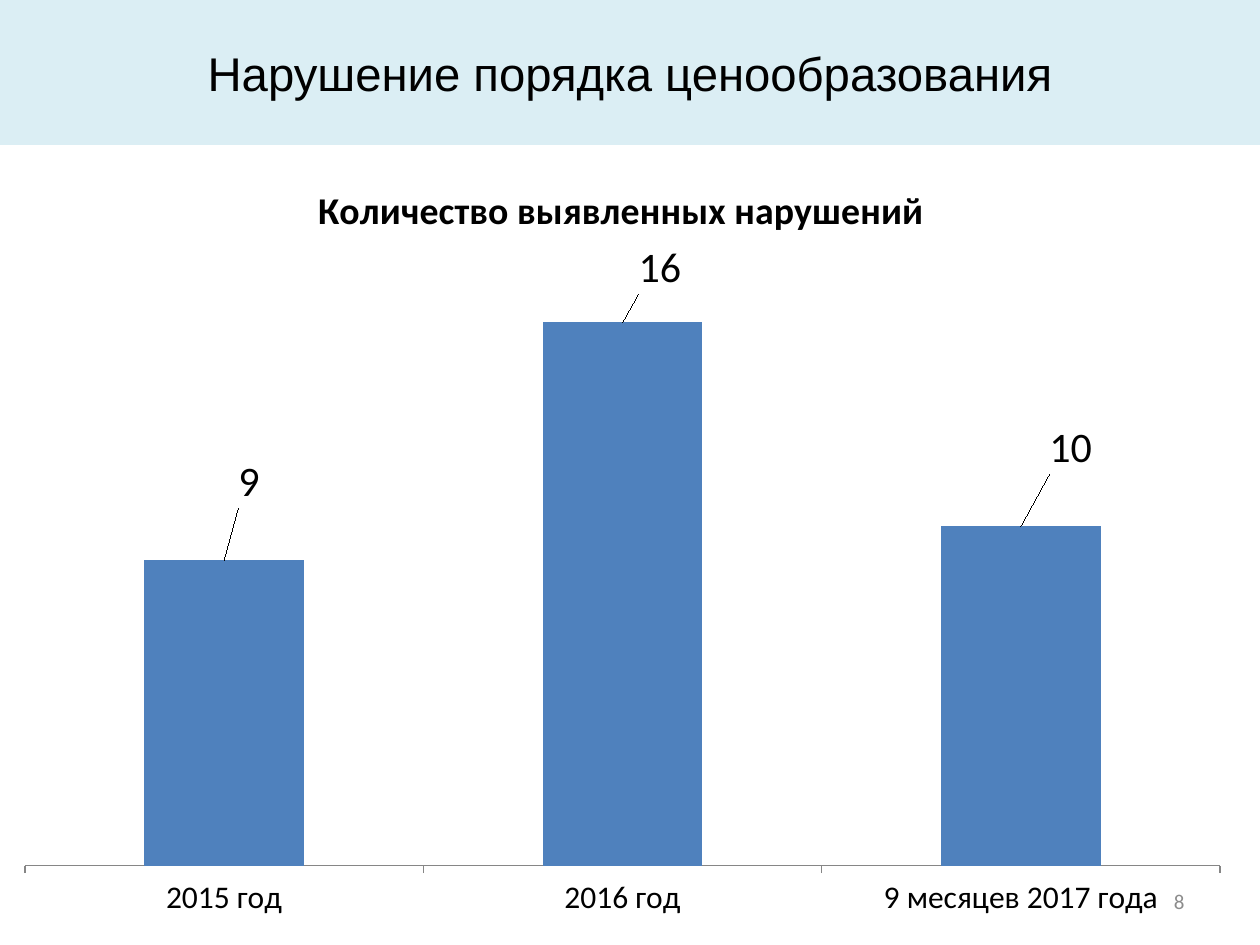
from lxml import etree
from pptx import Presentation
from pptx import util as u
from pptx.chart.data import CategoryChartData
from pptx.dml.color import RGBColor
from pptx.enum import chart as charts, shapes, text
from pptx.oxml.ns import qn

COLORS = {
    "band": "DBEEF4",
    "bar": "4F81BD",
    "axis": "868686",
    "text": "000000",
    "page_number": "8C8C8C",
}
CHART_TITLE = "Количество выявленных нарушений"
# Category, value, label shift as fractions of the chart size
VIOLATIONS = [
    ("2015 год", 9, (0.02, -0.06)),
    ("2016 год", 16, (0.03, -0.03)),
    ("9 месяцев 2017 года", 10, (0.04, -0.06)),
]


def color(name):
    return RGBColor.from_string(COLORS[name])


def set_font(font, name, size, color_name="text", bold=False):
    font.name = name
    font.size = u.Pt(size)
    font.bold = bold
    font.color.rgb = color(color_name)


def write_line(shape, words, alignment, **font):
    frame = shape.text_frame
    frame.word_wrap = True
    frame.vertical_anchor = text.MSO_ANCHOR.MIDDLE
    paragraph = frame.paragraphs[0]
    paragraph.text = words
    paragraph.alignment = alignment
    set_font(paragraph.font, **font)


def manual_layout(**settings):
    """Return a c:layout element that holds the given settings in order."""
    layout = etree.Element(qn("c:layout"))
    manual = etree.SubElement(layout, qn("c:manualLayout"))
    for name, value in settings.items():
        etree.SubElement(manual, qn(f"c:{name}"), val=str(value))
    return layout


def add_title_band(slide, width):
    band = slide.shapes.add_shape(
        shapes.MSO_SHAPE.RECTANGLE, 0, 0, width, u.Cm(2.92))
    band.shadow.inherit = False
    band.fill.solid()
    band.fill.fore_color.rgb = color("band")
    band.line.fill.background()
    write_line(band, "Нарушение порядка ценообразования",
               text.PP_ALIGN.CENTER, name="Arial", size=27)


def style_axes(chart):
    value_axis = chart.value_axis
    value_axis.visible = False
    value_axis.has_major_gridlines = False
    value_axis.minimum_scale = 0
    value_axis.maximum_scale = 18
    category_axis = chart.category_axis
    category_axis.major_tick_mark = charts.XL_TICK_MARK.OUTSIDE
    category_axis.format.line.color.rgb = color("axis")
    category_axis.format.line.width = u.Pt(0.75)


def place_labels(series):
    labels = series.data_labels
    labels.show_value = True
    set_font(labels.font, "Calibri", 24)
    for index, (_, _, (x, y)) in enumerate(VIOLATIONS):
        label = series.points[index].data_label
        label.position = charts.XL_LABEL_POSITION.OUTSIDE_END
        set_font(label.font, "Calibri", 24)
    for element, (_, _, (x, y)) in zip(
            labels._element.findall(qn("c:dLbl")), VIOLATIONS):
        element.insert(1, manual_layout(x=x, y=y))


def add_violations_chart(slide):
    data = CategoryChartData()
    data.categories = [category for category, _, _ in VIOLATIONS]
    data.add_series(CHART_TITLE, [value for _, value, _ in VIOLATIONS])
    chart = slide.shapes.add_chart(
        charts.XL_CHART_TYPE.COLUMN_CLUSTERED,
        0, u.Cm(2.92), u.Cm(25.1), u.Cm(15.8), data).chart
    set_font(chart.font, "Calibri", 18)
    chart.has_legend = False

    chart.has_title = True
    title = chart.chart_title
    title.include_in_layout = False
    paragraph = title.text_frame.paragraphs[0]
    paragraph.text = CHART_TITLE
    set_font(paragraph.font, "Calibri", 21.6, bold=True)
    title._element.find(qn("c:tx")).addnext(
        manual_layout(xMode="edge", yMode="edge", x=0.25, y=0.04))
    for layout in title._element.findall(qn("c:layout"))[1:]:
        title._element.remove(layout)

    plot_area = chart._chartSpace.chart.plotArea
    for layout in plot_area.findall(qn("c:layout")):
        plot_area.remove(layout)
    plot_area.insert(0, manual_layout(
        layoutTarget="inner", xMode="edge", yMode="edge",
        x=0.02, y=0.14, w=0.96, h=0.78))

    style_axes(chart)
    plot = chart.plots[0]
    plot.gap_width = 150
    plot.vary_by_categories = False
    series = plot.series[0]
    series.format.fill.solid()
    series.format.fill.fore_color.rgb = color("bar")
    place_labels(series)


def add_page_number(slide):
    box = slide.shapes.add_textbox(
        u.Cm(18.2), u.Cm(17.65), u.Cm(5.93), u.Cm(1.02))
    write_line(box, "8", text.PP_ALIGN.RIGHT,
               name="Calibri", size=12, color_name="page_number")


def main():
    presentation = Presentation()
    presentation.slide_width = u.Cm(25.4)
    presentation.slide_height = u.Cm(19.05)
    slide = presentation.slides.add_slide(presentation.slide_layouts[6])
    add_title_band(slide, presentation.slide_width)
    add_violations_chart(slide)
    add_page_number(slide)
    presentation.save("out.pptx")


if __name__ == "__main__":
    main()
